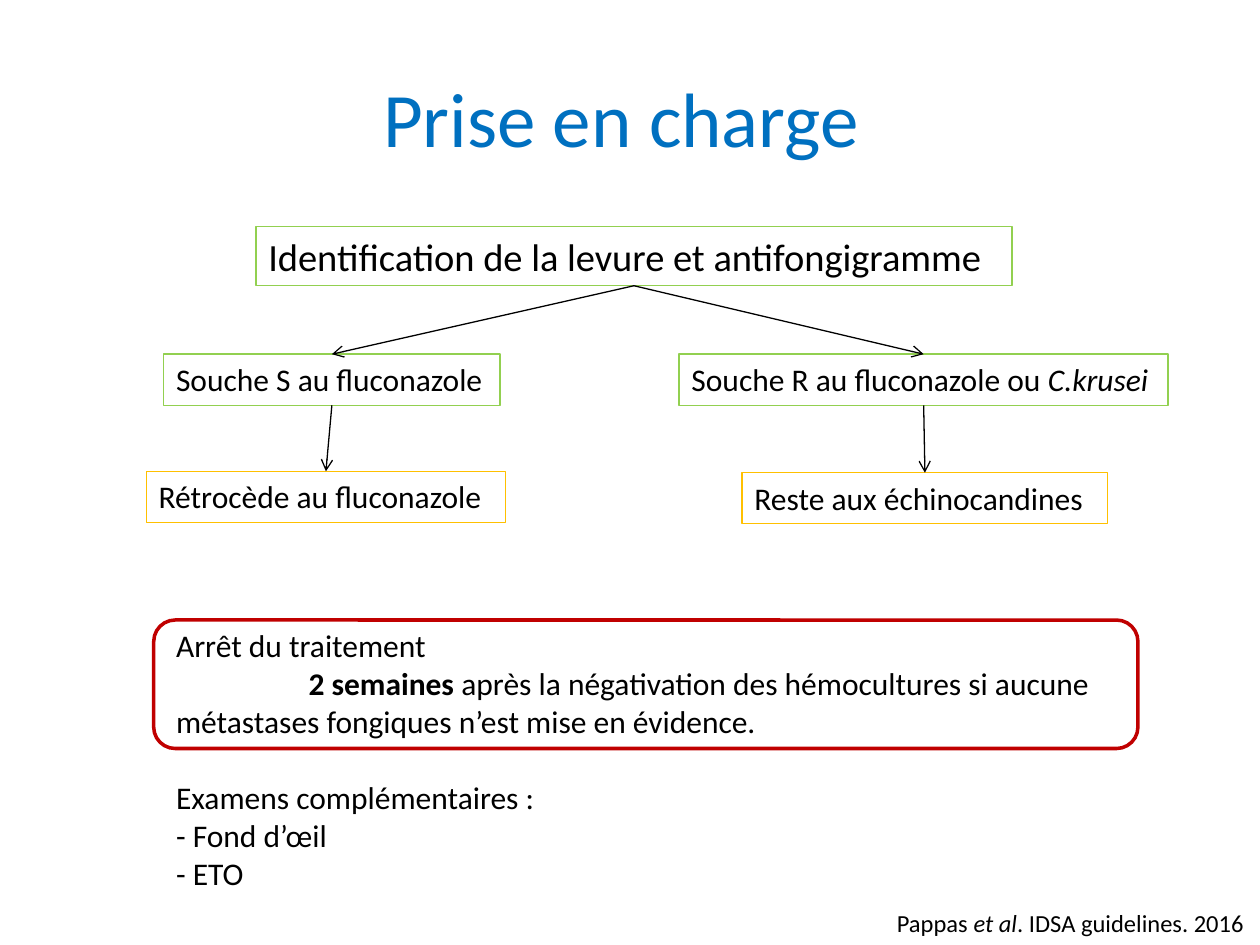
from lxml.etree import SubElement
from pptx import Presentation
from pptx.dml.color import RGBColor
from pptx.enum.shapes import MSO_CONNECTOR, MSO_SHAPE
from pptx.enum.text import MSO_ANCHOR, MSO_AUTO_SIZE, PP_ALIGN
from pptx.oxml.ns import qn
from pptx.util import Cm, Pt

BLACK, BLUE, GREEN, AMBER, RED = "000000", "0070C0", "92D050", "FFC000", "C00000"
TOP, BOTTOM = 0, 2  # connection sites of a rectangle

# Each paragraph is a list of (text, style) runs.
TITLE = [[("Prise en charge ", "")]]
TREATMENT = [
    [("Arrêt du traitement", "")],
    [("2 semaines ", "bold"),
     ("après la négativation des hémocultures si aucune "
      "métastases fongiques n’est mise en évidence.", "")],
    [("Examens complémentaires :", "")],
    [("- Fond d’œil", "")],
    [("- ETO", "")],
]
CITATION = [[("Pappas ", ""), ("et al", "italic"), (". IDSA guidelines. 2016", "")]]

# name: (left, top, width, height in cm, line colour, text size, runs)
STEPS = {
    "identification": (5.16, 4.57, 15.24, 1.19, GREEN, 22,
                       [("Identification de la levure et antifongigramme", "")]),
    "sensitive": (3.3, 7.14, 6.78, 1.03, GREEN, 18,
                  [("Souche S au fluconazole", "")]),
    "resistant": (13.69, 7.14, 9.86, 1.03, GREEN, 18,
                  [("Souche R au fluconazole ou ", ""), ("C.krusei", "italic")]),
    "fluconazole": (2.95, 9.5, 7.24, 1.03, AMBER, 18,
                    [("Rétrocède au fluconazole", "")]),
    "echinocandins": (14.96, 9.53, 7.37, 1.03, AMBER, 18,
                      [("Reste aux échinocandines", "")]),
}
ARROWS = [
    ("identification", "sensitive"),
    ("identification", "resistant"),
    ("sensitive", "fluconazole"),
    ("resistant", "echinocandins"),
]


def rgb(colour):
    return RGBColor.from_string(colour)


def write(shape, paragraphs, size, colour=BLACK, wrap=True):
    frame = shape.text_frame
    frame.text = "\n".join("" for _ in paragraphs)
    frame.word_wrap = wrap
    frame.auto_size = MSO_AUTO_SIZE.NONE if wrap else MSO_AUTO_SIZE.SHAPE_TO_FIT_TEXT
    frame.vertical_anchor = MSO_ANCHOR.TOP
    for paragraph, runs in zip(frame.paragraphs, paragraphs):
        paragraph.alignment = PP_ALIGN.LEFT
        for text, style in runs:
            run = paragraph.add_run()
            run.text = text
            run.font.name = "Calibri"
            run.font.size = Pt(size)
            run.font.color.rgb = rgb(colour)
            run.font.bold = style == "bold"
            run.font.italic = style == "italic"
    return frame


def add_text(slide, box, paragraphs, size, colour=BLACK, wrap=True):
    return write(slide.shapes.add_textbox(*map(Cm, box)), paragraphs, size, colour, wrap)


def add_outline(slide, kind, box, colour, width):
    """Add an unfilled shape with a coloured border."""
    shape = slide.shapes.add_shape(kind, *map(Cm, box))
    shape.shadow.inherit = False
    shape.fill.background()
    shape.line.color.rgb = rgb(colour)
    shape.line.width = Pt(width)
    return shape


def add_arrow(slide, source, target):
    arrow = slide.shapes.add_connector(MSO_CONNECTOR.STRAIGHT, 0, 0, 0, 0)
    arrow.begin_connect(source, BOTTOM)
    arrow.end_connect(target, TOP)
    arrow.line.color.rgb = rgb(BLACK)
    arrow.line.width = Pt(0.75)
    SubElement(arrow.line._get_or_add_ln(), qn("a:tailEnd"), type="arrow")
    SubElement(arrow._element.spPr, qn("a:effectLst"))


def main():
    presentation = Presentation()
    presentation.slide_width, presentation.slide_height = Cm(25.4), Cm(19.05)
    slide = presentation.slides.add_slide(presentation.slide_layouts[6])

    title = add_text(slide, (1.27, 0.76, 22.86, 3.18), TITLE, 44, BLUE)
    title.vertical_anchor = MSO_ANCHOR.MIDDLE
    title.paragraphs[0].alignment = PP_ALIGN.CENTER

    treatment = add_text(slide, (3.3, 12.5, 22.2, 6.4), TREATMENT, 18)
    treatment.margin_right = Cm(2.5)
    _, duration, examinations, *_ = treatment.paragraphs
    duration._p.get_or_add_pPr().set("indent", str(Cm(2.67)))
    examinations.space_before = Pt(22)

    steps = {}
    for name, (*box, colour, size, runs) in STEPS.items():
        steps[name] = add_outline(slide, MSO_SHAPE.RECTANGLE, box, colour, 0.75)
        write(steps[name], [runs], size, wrap=False)
    for source, target in ARROWS:
        add_arrow(slide, steps[source], steps[target])

    add_outline(slide, MSO_SHAPE.ROUNDED_RECTANGLE, (3.1, 12.5, 19.84, 2.59), RED, 2)
    add_text(slide, (17.83, 18.19, 7.57, 0.86), CITATION, 14, wrap=False)

    presentation.save("out.pptx")


if __name__ == "__main__":
    main()
